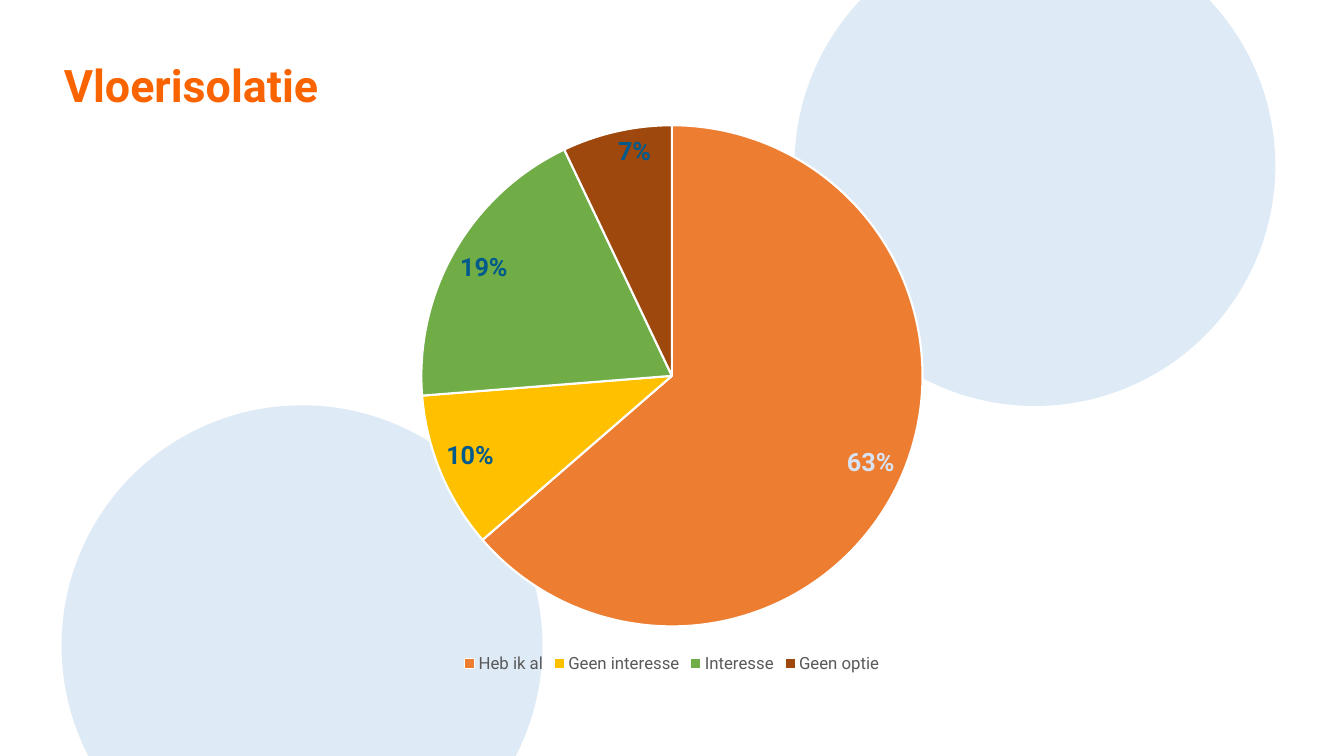
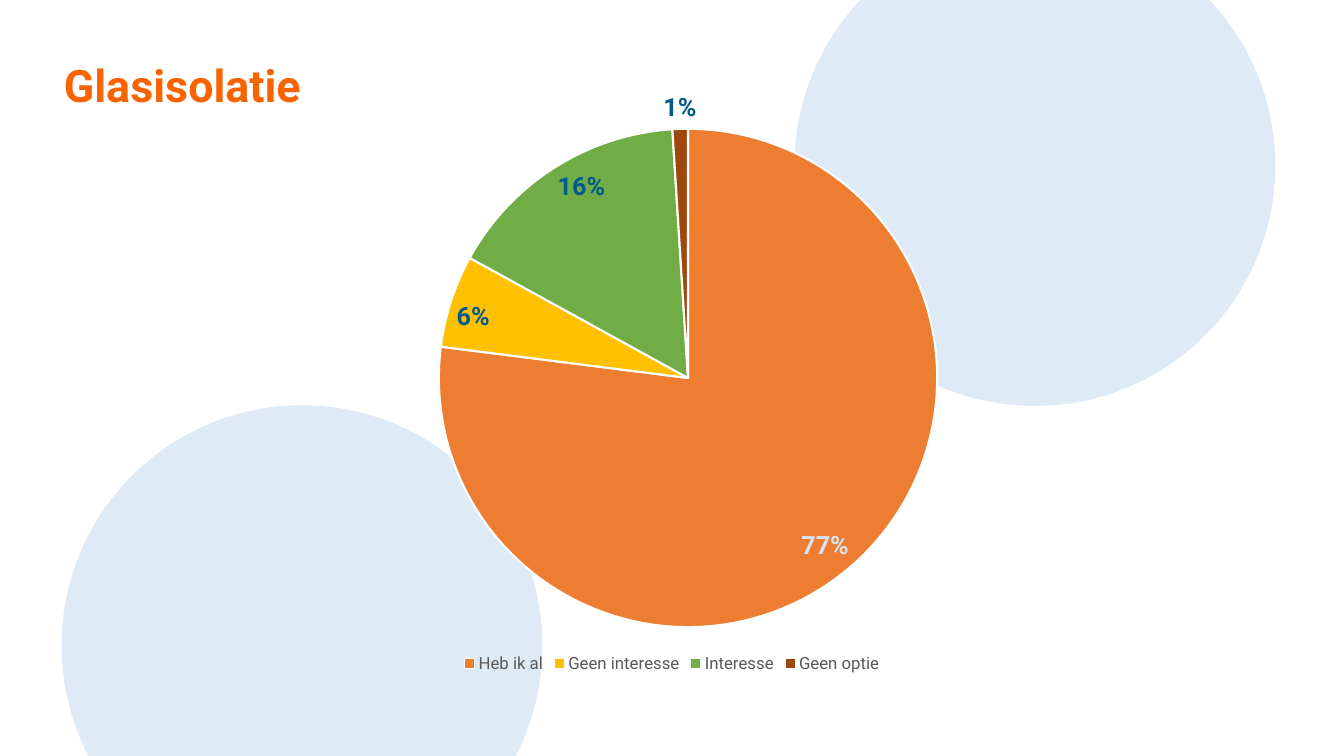
from lxml import etree
from pptx import Presentation
from pptx.chart.data import CategoryChartData
from pptx.dml.color import RGBColor
from pptx.enum.chart import XL_CHART_TYPE, XL_LABEL_POSITION, XL_LEGEND_POSITION
from pptx.enum.shapes import MSO_SHAPE
from pptx.enum.text import MSO_ANCHOR
from pptx.oxml.ns import qn
from pptx.util import Pt

PIE = XL_CHART_TYPE.PIE
INSIDE, OUTSIDE = XL_LABEL_POSITION.INSIDE_END, XL_LABEL_POSITION.OUTSIDE_END
BOTTOM_LEGEND = XL_LEGEND_POSITION.BOTTOM
ELLIPSE = MSO_SHAPE.OVAL
ANCHOR_BOTTOM = MSO_ANCHOR.BOTTOM

FONT = "Roboto"
ORANGE, PALE_BLUE, WHITE, GREY = "FA6400", "DEEBF7", "FFFFFF", "595959"
LABEL_DARK, LABEL_LIGHT = "005A8C", "D9E2F3"
PERCENT = '0"%"'

# Background circles: left, top
CIRCLE_SIZE = 343.5
CIRCLES = [(567.5, -53.5), (44, 289.5)]

# Chart frame and answers with their slice colours
CHART_LEFT, CHART_TOP, CHART_WIDTH, CHART_HEIGHT = 160, 57, 640, 427
ANSWERS = {
    "Heb ik al": "ED7D31",
    "Geen interesse": "FFC000",
    "Interesse": "70AD47",
    "Geen optie": "9E480E",
}

# Title, percentages, pie on the slide (left, top, diameter)
TOPICS = [
    ("Vloerisolatie", (63, 10, 19, 7), (301, 89.5, 358)),
    ("Glasisolatie", (77, 6, 16, 1), (313.5, 92, 356)),
]


def color(hex_code):
    return RGBColor.from_string(hex_code)


def add_text(slide, text, left, top, width, height, size, fill, bold=False):
    box = slide.shapes.add_textbox(Pt(left), Pt(top), Pt(width), Pt(height))
    frame = box.text_frame
    frame.word_wrap = True
    frame.vertical_anchor = ANCHOR_BOTTOM
    frame.margin_left = frame.margin_right = Pt(3.6)
    frame.margin_top = frame.margin_bottom = Pt(3.6)
    paragraph = frame.paragraphs[0]
    paragraph.text = text
    paragraph.line_spacing = 0.9
    font = paragraph.runs[0].font
    font.name, font.size, font.bold = FONT, Pt(size), bold
    font.color.rgb = color(fill)


deck = Presentation()
deck.slide_width, deck.slide_height = Pt(960), Pt(540)
blank = deck.slide_layouts[6]

for title, percentages, (pie_left, pie_top, diameter) in TOPICS:
    slide = deck.slides.add_slide(blank)

    # Background and title
    for left, top in CIRCLES:
        circle = slide.shapes.add_shape(
            ELLIPSE, Pt(left), Pt(top), Pt(CIRCLE_SIZE), Pt(CIRCLE_SIZE))
        circle.shadow.inherit = False
        circle.fill.solid()
        circle.fill.fore_color.rgb = color(PALE_BLUE)
        circle.line.fill.background()
    add_text(slide, title, 42, 29.5, 843, 54.5, size=32, fill=ORANGE, bold=True)

    # Pie chart
    data = CategoryChartData(number_format=PERCENT)
    data.categories = list(ANSWERS)
    data.add_series("Series 1", percentages)
    chart = slide.shapes.add_chart(
        PIE, Pt(CHART_LEFT), Pt(CHART_TOP), Pt(CHART_WIDTH), Pt(CHART_HEIGHT),
        data).chart
    chart.has_title = False
    chart.font.name, chart.font.size = FONT, Pt(12)
    chart.font.color.rgb = color(GREY)
    chart.has_legend = True
    chart.legend.position = BOTTOM_LEGEND
    chart.legend.include_in_layout = False
    chart.legend.font.name, chart.legend.font.size = FONT, Pt(12)
    chart.legend.font.color.rgb = color(GREY)

    # Fixed place of the pie, as fractions of the chart frame
    plot_area = chart.plots[0]._element.getparent()
    for old_layout in plot_area.findall(qn("c:layout")):
        plot_area.remove(old_layout)
    layout = etree.Element(qn("c:layout"))
    plot_area.insert(0, layout)
    manual = etree.SubElement(layout, qn("c:manualLayout"))
    for tag, value in [
        ("layoutTarget", "inner"), ("xMode", "edge"), ("yMode", "edge"),
        ("x", (pie_left - CHART_LEFT) / CHART_WIDTH),
        ("y", (pie_top - CHART_TOP) / CHART_HEIGHT),
        ("w", diameter / CHART_WIDTH), ("h", diameter / CHART_HEIGHT),
    ]:
        etree.SubElement(manual, qn(f"c:{tag}")).set("val", str(value))

    # Slices and their labels
    plot = chart.plots[0]
    plot.vary_by_categories = True
    series = plot.series[0]
    labels = series.data_labels
    labels.show_value = True
    labels.show_percentage = False
    labels.number_format = PERCENT
    labels.number_format_is_linked = False
    for index, (percentage, fill) in enumerate(zip(percentages, ANSWERS.values())):
        point = series.points[index]
        point.format.fill.solid()
        point.format.fill.fore_color.rgb = color(fill)
        point.format.line.width = Pt(1.5)
        point.format.line.color.rgb = color(WHITE)
        label = point.data_label
        label.font.name, label.font.size, label.font.bold = FONT, Pt(18), True
        label.font.color.rgb = color(LABEL_DARK if index else LABEL_LIGHT)
        label.position = INSIDE if percentage > 5 else OUTSIDE

deck.save("out.pptx")
